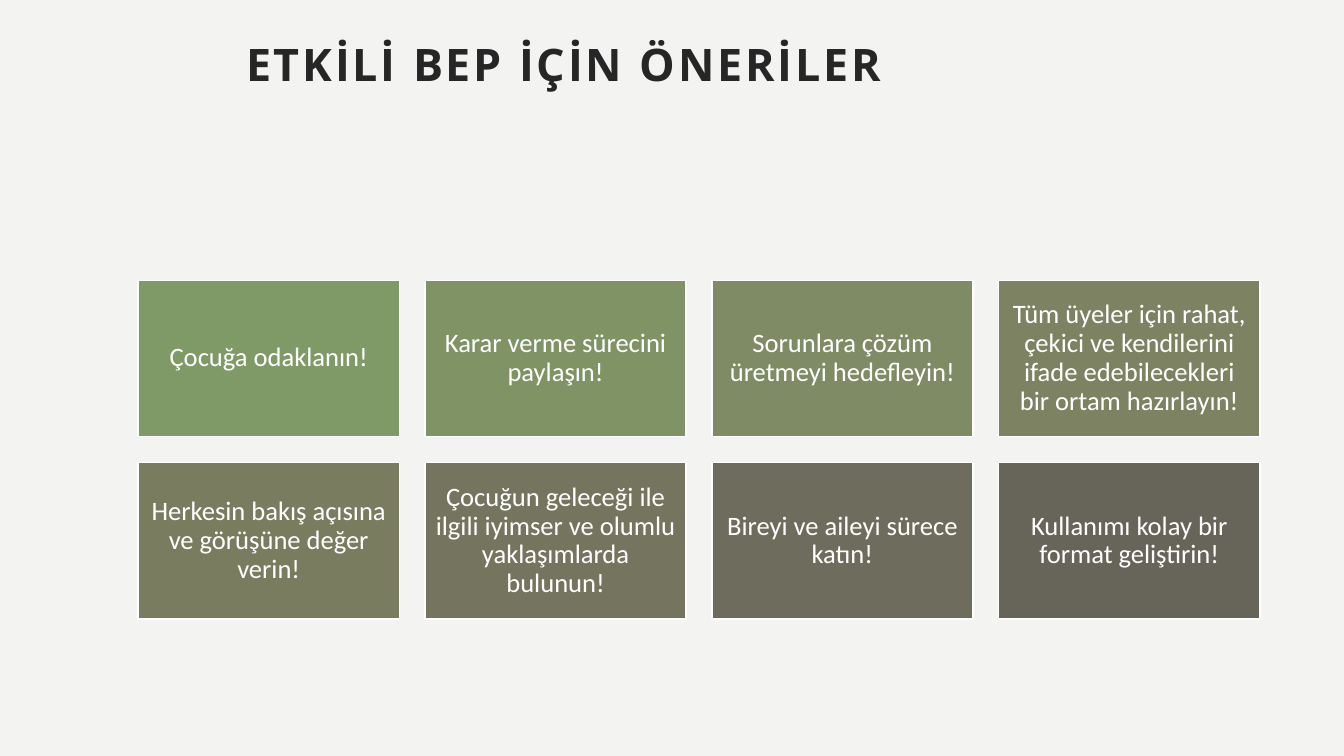
"""Build the slide of suggestions for an effective BEP."""
from dataclasses import dataclass

from pptx import Presentation
from pptx.dml.color import RGBColor
from pptx.enum.shapes import MSO_SHAPE
from pptx.enum.text import MSO_ANCHOR, MSO_AUTO_SIZE, PP_ALIGN
from pptx.slide import Slide
from pptx.util import Inches, Pt

RECTANGLE = MSO_SHAPE.RECTANGLE
TOP, MIDDLE = MSO_ANCHOR.TOP, MSO_ANCHOR.MIDDLE
LEFT, CENTER = PP_ALIGN.LEFT, PP_ALIGN.CENTER
NO_AUTOFIT = MSO_AUTO_SIZE.NONE
TITLE_ONLY = 5


@dataclass(frozen=True)
class Theme:
    background: str = "F3F3F2"
    title_color: str = "262626"
    card_text: str = "FFFFFF"
    card_line: str = "FFFFFF"
    title_font: str = "Open Sans"
    card_font: str = "Calibri"
    title_size: int = 32
    card_size: int = 19
    title_tracking: int = 200
    line_spacing: float = 0.9


@dataclass(frozen=True)
class Grid:
    left: float = 1.37
    top: float = 2.78
    width: float = 2.59
    height: float = 1.55
    column_step: float = 2.845
    row_step: float = 1.81
    columns: int = 4


@dataclass(frozen=True)
class Suggestion:
    text: str
    fill: str


THEME = Theme()
GRID = Grid()
TITLE = "ETKİLİ BEP İÇİN ÖNERİLER"
SUGGESTIONS = [
    Suggestion("Çocuğa odaklanın!", "809A67"),
    Suggestion("Karar verme sürecini paylaşın!", "809365"),
    Suggestion("Sorunlara çözüm üretmeyi hedefleyin!", "7F8B64"),
    Suggestion("Tüm üyeler için rahat, çekici ve kendilerini ifade "
               "edebilecekleri bir ortam hazırlayın!", "7D8362"),
    Suggestion("Herkesin bakış açısına ve görüşüne değer verin!", "7A7C60"),
    Suggestion("Çocuğun geleceği ile ilgili iyimser ve olumlu "
               "yaklaşımlarda bulunun!", "75745E"),
    Suggestion("Bireyi ve aileyi sürece katın!", "6E6C5C"),
    Suggestion("Kullanımı kolay bir format geliştirin!", "67645A"),
]


def color(value: str) -> RGBColor:
    """Turn a hexadecimal value into a colour."""
    return RGBColor.from_string(value)


def add_title(slide: Slide, text: str) -> None:
    """Place and format the title placeholder."""
    title = slide.shapes.title
    title.left, title.top = Inches(1.37), Inches(0.42)
    title.width, title.height = Inches(11.13), Inches(1.63)
    frame = title.text_frame
    frame.text = text
    frame.word_wrap = True
    frame.auto_size = NO_AUTOFIT
    frame.vertical_anchor = TOP
    frame.margin_left, frame.margin_top = Inches(1.07), 0
    paragraph = frame.paragraphs[0]
    paragraph.alignment = LEFT
    paragraph.line_spacing = THEME.line_spacing
    paragraph.font.name = THEME.title_font
    paragraph.font.size = Pt(THEME.title_size)
    paragraph.font.bold = True
    paragraph.font.color.rgb = color(THEME.title_color)
    run_properties = paragraph.runs[0]._r.get_or_add_rPr()
    run_properties.set("spc", str(THEME.title_tracking))


def add_card(slide: Slide, index: int, suggestion: Suggestion) -> None:
    """Draw one suggestion in its grid cell."""
    row, column = divmod(index, GRID.columns)
    card = slide.shapes.add_shape(
        RECTANGLE,
        Inches(GRID.left + column * GRID.column_step),
        Inches(GRID.top + row * GRID.row_step),
        Inches(GRID.width), Inches(GRID.height))
    card.shadow.inherit = False
    card.fill.solid()
    card.fill.fore_color.rgb = color(suggestion.fill)
    card.line.color.rgb = color(THEME.card_line)
    card.line.width = Pt(1)
    frame = card.text_frame
    frame.text = suggestion.text
    frame.word_wrap = True
    frame.vertical_anchor = MIDDLE
    frame.margin_left = frame.margin_right = Inches(0.08)
    frame.margin_top = frame.margin_bottom = Inches(0.08)
    paragraph = frame.paragraphs[0]
    paragraph.alignment = CENTER
    paragraph.line_spacing = THEME.line_spacing
    paragraph.font.name = THEME.card_font
    paragraph.font.size = Pt(THEME.card_size)
    paragraph.font.color.rgb = color(THEME.card_text)


def main() -> None:
    """Create and save the presentation."""
    presentation = Presentation()
    presentation.slide_width = Inches(13.33)
    presentation.slide_height = Inches(7.5)
    slide = presentation.slides.add_slide(presentation.slide_layouts[TITLE_ONLY])
    slide.background.fill.solid()
    slide.background.fill.fore_color.rgb = color(THEME.background)
    add_title(slide, TITLE)
    for index, suggestion in enumerate(SUGGESTIONS):
        add_card(slide, index, suggestion)
    presentation.save("out.pptx")


if __name__ == "__main__":
    main()
